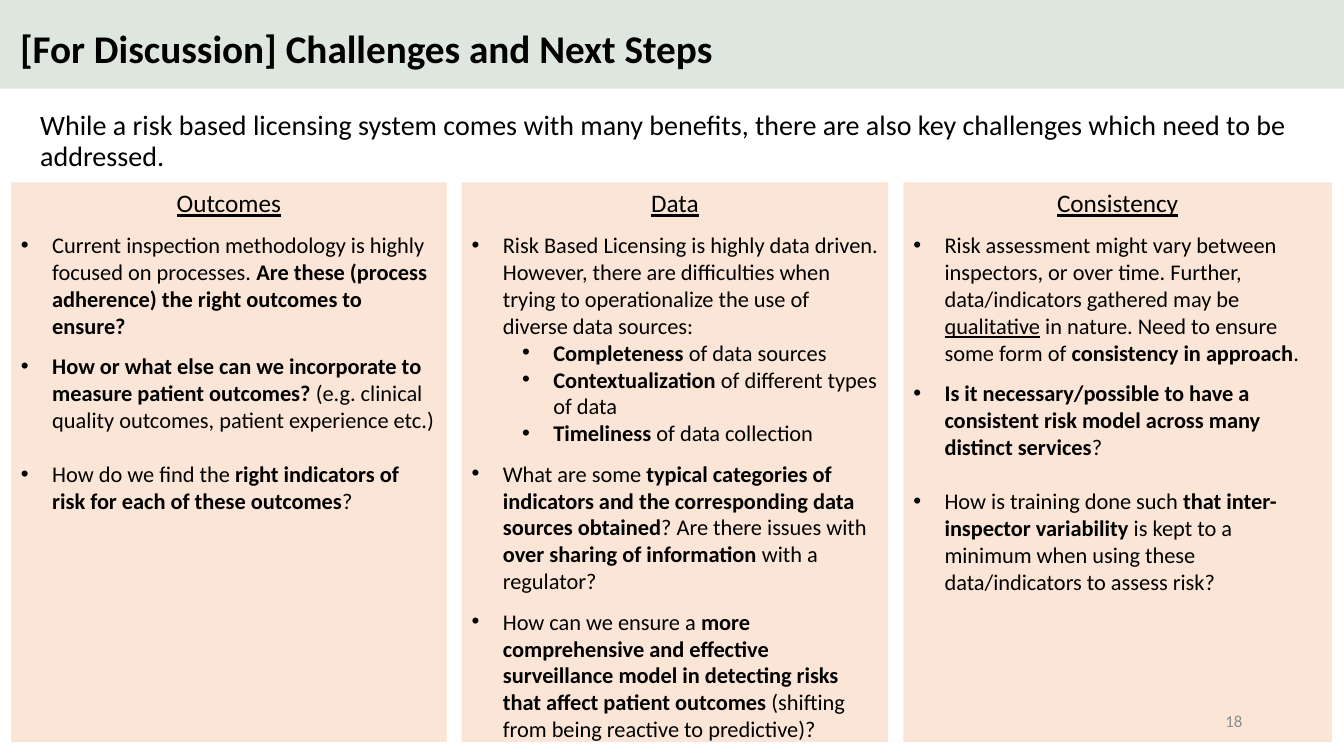
from pptx import Presentation
from pptx import util as u
from pptx.dml.color import RGBColor
from pptx.enum import shapes, text
from pptx.oxml.xmlchemy import OxmlElement

GREEN = RGBColor(0xDE, 0xE7, 0xDD)
PEACH = RGBColor(0xFB, 0xE5, 0xD6)
BLACK = RGBColor(0, 0, 0)
GRAY = RGBColor(0x8C, 0x8C, 0x8C)
FONT = "Calibri"

TOP, HIGH, GAP = 1.81, 5.55, 0.15
SMALL, LARGE = 9.75, 19.5

# BOLD and UNDER mark where a style switches on and off.
BOLD, UNDER = "*", "_"

COLS = [
    ("Outcomes", 4.32, [
        (SMALL, 0, "Current inspection methodology is highly focused on processes. "
                   "*Are these (process adherence) the right outcomes to ensure?*"),
        (SMALL, 0, "*How or what else can we incorporate to measure patient outcomes? *"
                   "(e.g. clinical quality outcomes, patient experience etc.)"),
        (LARGE, 0, "How do we find the *right indicators of risk for each of these outcomes*?"),
    ]),
    ("Data", 4.23, [
        (SMALL, 0, "Risk Based Licensing is highly data driven. However, there are difficulties "
                   "when trying to operationalize the use of diverse data sources:"),
        (0, 1, "*Completeness *of data sources"),
        (0, 1, "*Contextualization* of different types of data"),
        (0, 1, "*Timeliness* of data collection"),
        (SMALL, 0, "What are some *typical categories of indicators and the corresponding data "
                   "sources obtained*? Are there issues with *over sharing of information *"
                   "with a regulator?"),
        (SMALL, 0, "How can we ensure a *more comprehensive and effective surveillance model in "
                   "detecting risks that affect patient outcomes *"
                   "(shifting from being reactive to predictive)?"),
    ]),
    ("Consistency", 4.25, [
        (SMALL, 0, "Risk assessment might vary between inspectors, or over time. Further, "
                   "data/indicators gathered may be _qualitative_ in nature. Need to ensure "
                   "some form of *consistency in approach*."),
        (SMALL, 0, "*Is it necessary/possible to have a consistent risk model across many "
                   "distinct services*?"),
        (LARGE, 0, "How is training done such *that inter-inspector variability *"
                   "is kept to a minimum when using these data/indicators to assess risk?"),
    ]),
]


def style(run, size, color=BLACK, bold=False, under=False):
    font = run.font
    font.name, font.size, font.color.rgb = FONT, u.Pt(size), color
    font.bold, font.underline = bold, under


def panel(slide, box, fill):
    rect = slide.shapes.add_shape(shapes.MSO_SHAPE.RECTANGLE, *map(u.Inches, box))
    rect.shadow.inherit = False
    rect.fill.solid()
    rect.fill.fore_color.rgb = fill
    rect.line.fill.background()
    return rect


def label(slide, box, words, size, color=BLACK, bold=False, line=1.0,
          align=text.PP_ALIGN.LEFT, anchor=text.MSO_ANCHOR.MIDDLE):
    frame = slide.shapes.add_textbox(*map(u.Inches, box)).text_frame
    frame.word_wrap = True
    frame.vertical_anchor = anchor
    frame.text = words
    para = frame.paragraphs[0]
    para.alignment, para.line_spacing = align, line
    style(para.runs[0], size, color, bold)


def bullet(frame, gap, level, words):
    para = frame.add_paragraph()
    para.level = level
    para.alignment = text.PP_ALIGN.LEFT
    para.space_before = u.Pt(gap)
    props = para._p.get_or_add_pPr()
    props.set("marL", str(u.Inches(0.31 + 0.5 * level)))
    props.set("indent", str(u.Inches(-0.31)))
    face = OxmlElement("a:buFont")
    face.set("typeface", "Arial")
    mark = OxmlElement("a:buChar")
    mark.set("char", "•")
    props.extend([face, mark])
    for i, part in enumerate(words.split(BOLD)):
        for j, piece in enumerate(part.split(UNDER)):
            if piece:
                run = para.add_run()
                run.text = piece
                style(run, 16, bold=i % 2 == 1, under=j % 2 == 1)


def column(slide, box, head, items):
    frame = panel(slide, box, PEACH).text_frame
    frame.word_wrap = True
    frame.vertical_anchor = text.MSO_ANCHOR.TOP
    frame.text = head
    para = frame.paragraphs[0]
    para.alignment = text.PP_ALIGN.CENTER
    style(para.runs[0], 18, under=True)
    for item in items:
        bullet(frame, *item)


def header(slide, box):
    left, top, width, height = box
    panel(slide, box, GREEN)
    label(slide, (left + 0.1, top + 0.14, width - 0.22, height - 0.15),
          "[For Discussion] Challenges and Next Steps", 28, bold=True, line=0.9)


def main():
    deck = Presentation()
    deck.slide_width, deck.slide_height = u.Inches(13.33), u.Inches(7.5)
    slide = deck.slides.add_slide(deck.slide_layouts[6])
    header(slide, (0, 0, 13.33, 0.88))
    label(slide, (0.3, 1.06, 12.72, 0.7),
          "While a risk based licensing system comes with many benefits, there are also "
          "key challenges which need to be addressed.",
          20, line=0.9, anchor=text.MSO_ANCHOR.TOP)
    left = 0.11
    for head, width, items in COLS:
        column(slide, (left, TOP, width, HIGH), head, items)
        left += width + GAP
    label(slide, (9.42, 6.95, 3, 0.4), "18", 12, GRAY, align=text.PP_ALIGN.RIGHT)
    deck.save("out.pptx")


if __name__ == "__main__":
    main()
